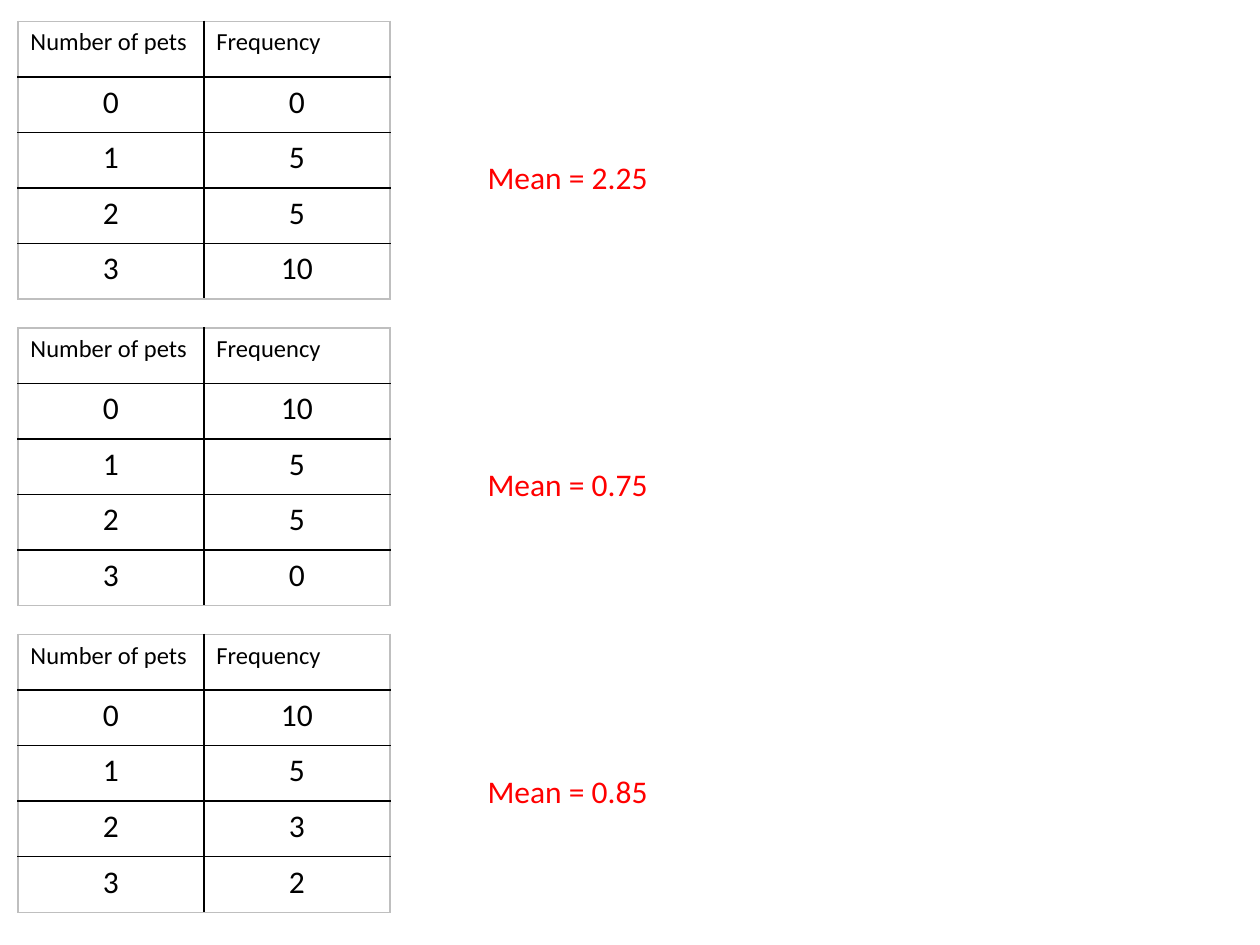
from dataclasses import dataclass

from lxml.etree import SubElement
from pptx import Presentation
from pptx.dml.color import RGBColor
from pptx.enum.text import MSO_AUTO_SIZE, PP_ALIGN
from pptx.oxml.ns import qn
from pptx.util import Cm, Pt


@dataclass(frozen=True)
class Theme:
    font: str = "Calibri"
    text: str = "000000"
    answer: str = "FF0000"
    grid: str = "000000"
    frame: str = "BFBFBF"
    header_size: int = 14
    body_size: int = 18
    line_width: int = 1


THEME = Theme()
HEADERS = ("Number of pets", "Frequency")
SURVEYS = (
    ((0, 5, 5, 10), "2.25"),
    ((10, 5, 5, 0), "0.75"),
    ((10, 5, 3, 2), "0.85"),
)
LEFT, TOP, PITCH = 0.36, 0.43, 6.18
COL_WIDTH, ROW_HEIGHT = 3.75, 1.12
MEAN_LEFT, MEAN_OFFSET = 9.58, 2.64


def add_run(p, text, size, color):
    r = p.add_run()
    r.text = text
    r.font.name = THEME.font
    r.font.size = Pt(size)
    r.font.color.rgb = RGBColor.from_string(color)


def set_border(cell, side, color):
    ln = SubElement(cell._tc.get_or_add_tcPr(), qn(f"a:ln{side}"), w=str(Pt(THEME.line_width)))
    fill = SubElement(ln, qn("a:solidFill"))
    SubElement(fill, qn("a:srgbClr"), val=color)


def add_frequency_table(s, top, frequencies):
    rows = [HEADERS, *((str(n), str(f)) for n, f in enumerate(frequencies))]
    n_rows, n_cols = len(rows), len(HEADERS)
    table = s.shapes.add_table(
        n_rows, n_cols, Cm(LEFT), Cm(top), Cm(COL_WIDTH * n_cols), Cm(ROW_HEIGHT * n_rows)
    ).table
    table.first_row = table.horz_banding = False
    for column in table.columns:
        column.width = Cm(COL_WIDTH)
    for i, values in enumerate(rows):
        table.rows[i].height = Cm(ROW_HEIGHT)
        for j, value in enumerate(values):
            cell = table.cell(i, j)
            outer = {"L": j == 0, "R": j == n_cols - 1, "T": i == 0, "B": i == n_rows - 1}
            for side, is_outer in outer.items():
                set_border(cell, side, THEME.frame if is_outer else THEME.grid)
            cell.fill.background()
            p = cell.text_frame.paragraphs[0]
            p.alignment = PP_ALIGN.CENTER if i else PP_ALIGN.LEFT
            add_run(p, value, THEME.body_size if i else THEME.header_size, THEME.text)


def add_mean(s, top, mean):
    sp = s.shapes.add_textbox(Cm(MEAN_LEFT), Cm(top), Cm(7.34), Cm(1.02))
    tf = sp.text_frame
    tf.word_wrap = True
    tf.auto_size = MSO_AUTO_SIZE.SHAPE_TO_FIT_TEXT
    add_run(tf.paragraphs[0], f"Mean = {mean}", THEME.body_size, THEME.answer)


def main():
    prs = Presentation()
    prs.slide_width, prs.slide_height = Cm(25.4), Cm(19.05)
    s = prs.slides.add_slide(prs.slide_layouts[6])
    for i, (frequencies, mean) in enumerate(SURVEYS):
        top = TOP + i * PITCH
        add_frequency_table(s, top, frequencies)
        add_mean(s, top + MEAN_OFFSET, mean)
    prs.save("out.pptx")


if __name__ == "__main__":
    main()
